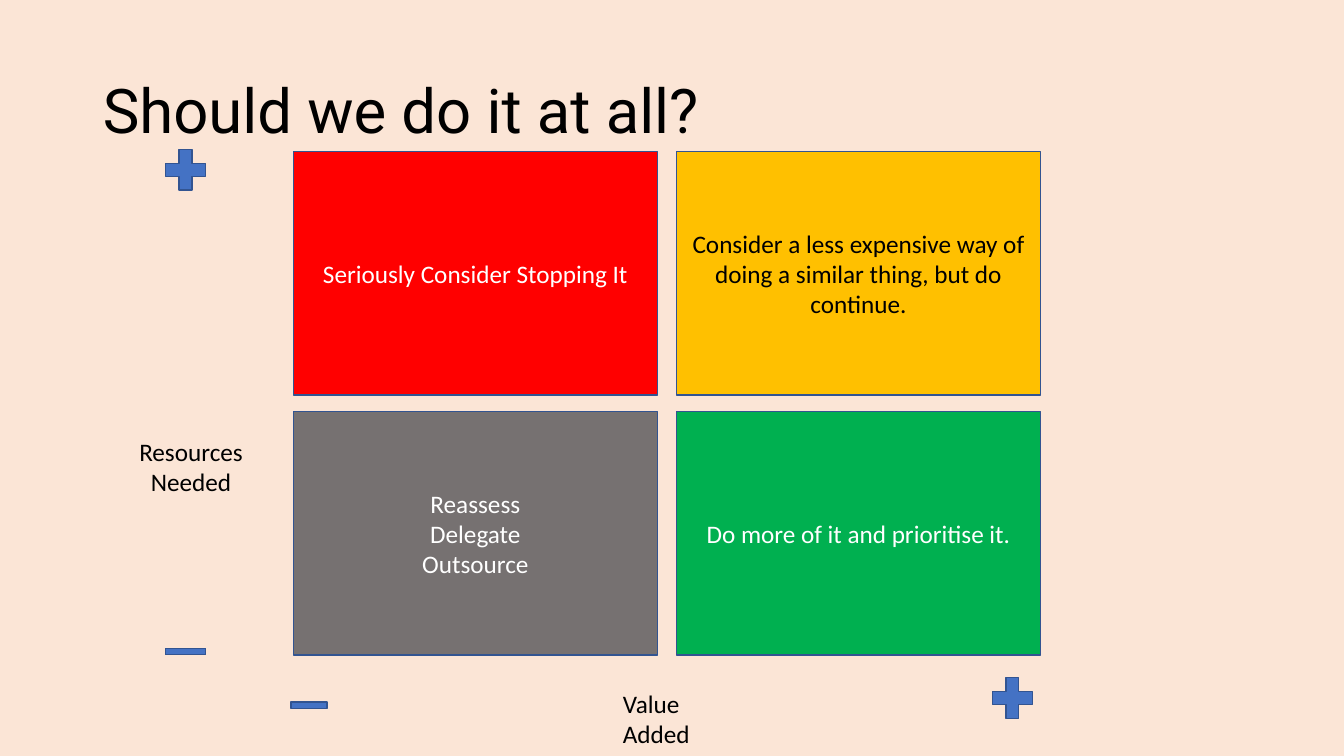
from pptx import Presentation
from pptx.dml.color import RGBColor
from pptx.enum.shapes import MSO_SHAPE as Shape
from pptx.enum.text import MSO_ANCHOR as Anchor, PP_ALIGN as Align
from pptx.util import Inches, Pt

TITLE = "Should we do it at all?"
QUADRANTS = [
    [(["Seriously Consider Stopping It"], "FF0000", "FFFFFF"),
     (["Consider a less expensive way of doing a similar thing, but do continue."],
      "FFC000", "000000")],
    [(["Reassess", "Delegate", "Outsource"], "767171", "FFFFFF"),
     (["Do more of it and prioritise it."], "00B050", "FFFFFF")],
]
AXIS_LABELS = [
    (["Resources", "Needed"], (1.2, 4.28, 1.39, 0.71), Align.CENTER),
    (["Value Added"], (6.08, 6.78, 1.26, 0.71), Align.LEFT),
]
AXIS_SIGNS = [
    (Shape.MATH_PLUS, (1.57, 1.41, 0.54, 0.55)),
    (Shape.MATH_PLUS, (9.77, 6.65, 0.54, 0.55)),
    (Shape.MATH_MINUS, (1.57, 6.33, 0.54, 0.27)),
    (Shape.MATH_MINUS, (2.82, 6.86, 0.49, 0.27)),
]
THEME = {
    "background": "FBE5D6", "sign": "4472C4", "outline": "325491", "text": "000000",
    "title": {"name": "Roboto", "size": Pt(44)},
    "body": {"name": "Calibri", "size": Pt(18)},
}
GRID_LEFT, GRID_TOP = 2.91, 1.5
CELL_WIDTH, CELL_HEIGHT = 3.61, 2.42
COLUMN_GAP, ROW_GAP = 0.19, 0.16


def rgb(value):
    return RGBColor.from_string(value)


def inches(area):
    return [Inches(length) for length in area]


def write(shape, lines, style, color, align, anchor):
    frame = shape.text_frame
    frame.word_wrap = True
    frame.vertical_anchor = anchor
    frame.text = "\n".join(lines)
    for para in frame.paragraphs:
        para.alignment = align
        for span in para.runs:
            for name, value in style.items():
                setattr(span.font, name, value)
            span.font.color.rgb = rgb(color)


def add_filled(page, kind, area, fill):
    shape = page.shapes.add_shape(kind, *inches(area))
    shape.shadow.inherit = False
    shape.fill.solid()
    shape.fill.fore_color.rgb = rgb(fill)
    shape.line.color.rgb = rgb(THEME["outline"])
    shape.line.width = Pt(1)
    return shape


def add_title(page):
    title = page.shapes.title
    title.left, title.top, title.width, title.height = inches((0.92, 0.4, 11.5, 1.45))
    write(title, [TITLE], THEME["title"], THEME["text"], Align.LEFT, Anchor.MIDDLE)
    title.text_frame.paragraphs[0].line_spacing = 0.9


def add_quadrants(page):
    for row, cells in enumerate(QUADRANTS):
        for column, (lines, fill, color) in enumerate(cells):
            area = (GRID_LEFT + column * (CELL_WIDTH + COLUMN_GAP),
                    GRID_TOP + row * (CELL_HEIGHT + ROW_GAP), CELL_WIDTH, CELL_HEIGHT)
            box = add_filled(page, Shape.RECTANGLE, area, fill)
            write(box, lines, THEME["body"], color, Align.CENTER, Anchor.MIDDLE)


def add_axes(page):
    for lines, area, align in AXIS_LABELS:
        box = page.shapes.add_textbox(*inches(area))
        write(box, lines, THEME["body"], THEME["text"], align, Anchor.TOP)
    for kind, area in AXIS_SIGNS:
        add_filled(page, kind, area, THEME["sign"])


def main():
    deck = Presentation()
    deck.slide_width, deck.slide_height = inches((13.33, 7.5))
    page = deck.slides.add_slide(deck.slide_layouts[5])
    page.background.fill.solid()
    page.background.fill.fore_color.rgb = rgb(THEME["background"])
    add_title(page)
    add_quadrants(page)
    add_axes(page)
    deck.save("out.pptx")


if __name__ == "__main__":
    main()
